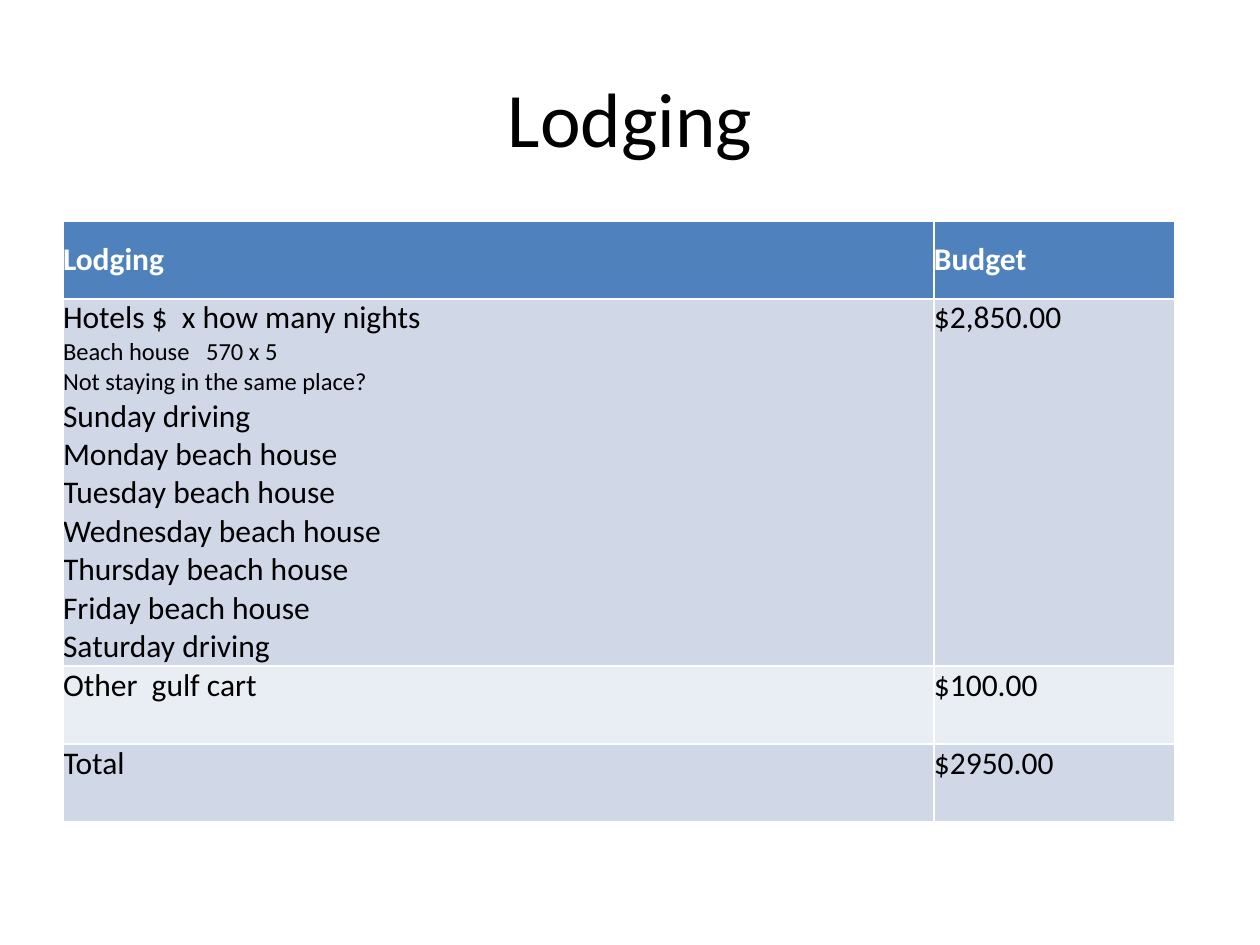
from dataclasses import dataclass

from pptx import Presentation
from pptx.dml.color import RGBColor
from pptx.enum.text import MSO_ANCHOR, PP_ALIGN
from pptx.util import Pt

EMU_PER_PX = 914400 // 126
FONT = "Calibri"
COLORS = {
    "text": "000000",
    "header_text": "FFFFFF",
    "header": "4F81BD",
    "dark_band": "D0D8E8",
    "light_band": "E9EDF4",
}


@dataclass
class Line:
    text: str
    size: int = 18


@dataclass
class BudgetRow:
    items: list[Line]
    amount: str
    fill: str
    height: int = 78
    header: bool = False


NIGHTS = ["Sunday driving"]
NIGHTS += [f"{day} beach house" for day in
           ("Monday", "Tuesday", "Wednesday", "Thursday", "Friday")]
NIGHTS += ["Saturday driving"]

HOTELS = [
    Line("Hotels $  x how many nights"),
    Line("Beach house   570 x 5", 14),
    Line("Not staying in the same place?", 14),
    *map(Line, NIGHTS),
]
ROWS = [
    BudgetRow([Line("Lodging")], "Budget", "header", header=True),
    BudgetRow(HOTELS, "$2,850.00", "dark_band", height=367),
    BudgetRow([Line("Other  gulf cart")], "$100.00", "light_band"),
    BudgetRow([Line("Total")], "$2950.00", "dark_band"),
]
COLUMN_WIDTHS = [871, 241]


def px(length: int) -> int:
    return length * EMU_PER_PX


def rgb(name: str) -> RGBColor:
    return RGBColor.from_string(COLORS[name])


def write(para, text: str, *, size: int = 18, color: str = "text",
          bold: bool = False, align=PP_ALIGN.LEFT) -> None:
    para.alignment = align
    span = para.add_run()
    span.text = text
    span.font.name = FONT
    span.font.size = Pt(size)
    span.font.bold = bold
    span.font.color.rgb = rgb(color)


def fill_cell(cell, lines: list[Line], row: BudgetRow) -> None:
    cell.margin_left = cell.margin_right = 0
    cell.margin_top = cell.margin_bottom = 0
    cell.vertical_anchor = MSO_ANCHOR.MIDDLE if row.header else MSO_ANCHOR.TOP
    cell.fill.solid()
    cell.fill.fore_color.rgb = rgb(row.fill)
    frame = cell.text_frame
    for index, line in enumerate(lines):
        para = frame.add_paragraph() if index else frame.paragraphs[0]
        write(para, line.text, size=line.size, bold=row.header,
              color="header_text" if row.header else "text")


def add_title(page, text: str) -> None:
    title = page.shapes.title
    title.left, title.top = px(63), px(38)
    title.width, title.height = px(1134), px(158)
    title.text_frame.vertical_anchor = MSO_ANCHOR.MIDDLE
    write(title.text_frame.paragraphs[0], text, size=44, align=PP_ALIGN.CENTER)


def add_budget_table(page, rows: list[BudgetRow]) -> None:
    """Add the table; its default style draws the white cell borders."""
    table = page.shapes.add_table(
        len(rows), len(COLUMN_WIDTHS), px(63), px(221),
        px(sum(COLUMN_WIDTHS)), px(sum(row.height for row in rows))).table
    for column, width in zip(table.columns, COLUMN_WIDTHS):
        column.width = px(width)
    for table_row, row in zip(table.rows, rows):
        table_row.height = px(row.height)
        item_cell, amount_cell = table_row.cells
        fill_cell(item_cell, row.items, row)
        fill_cell(amount_cell, [Line(row.amount)], row)


def main() -> None:
    deck = Presentation()
    deck.slide_width, deck.slide_height = px(1260), px(945)
    page = deck.slides.add_slide(deck.slide_layouts.get_by_name("Title Only"))
    add_title(page, "Lodging")
    add_budget_table(page, ROWS)
    deck.save("out.pptx")


if __name__ == "__main__":
    main()
